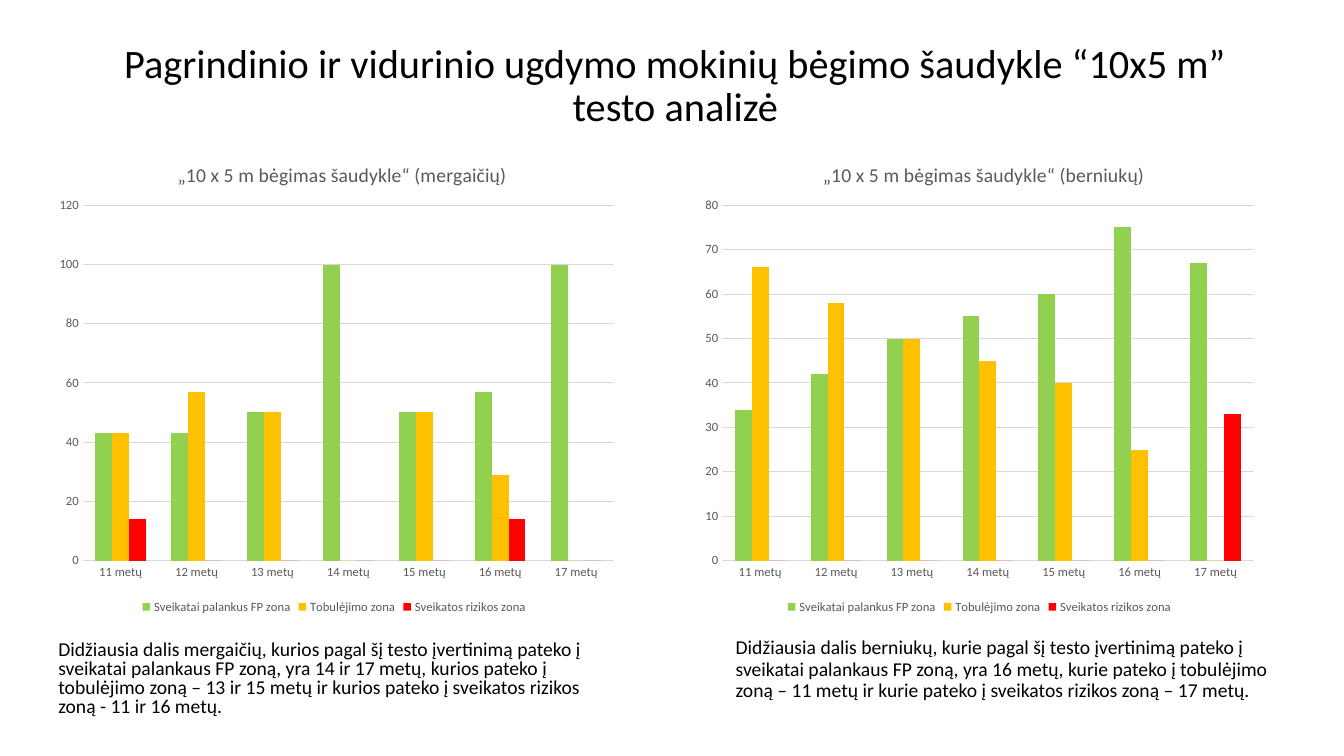
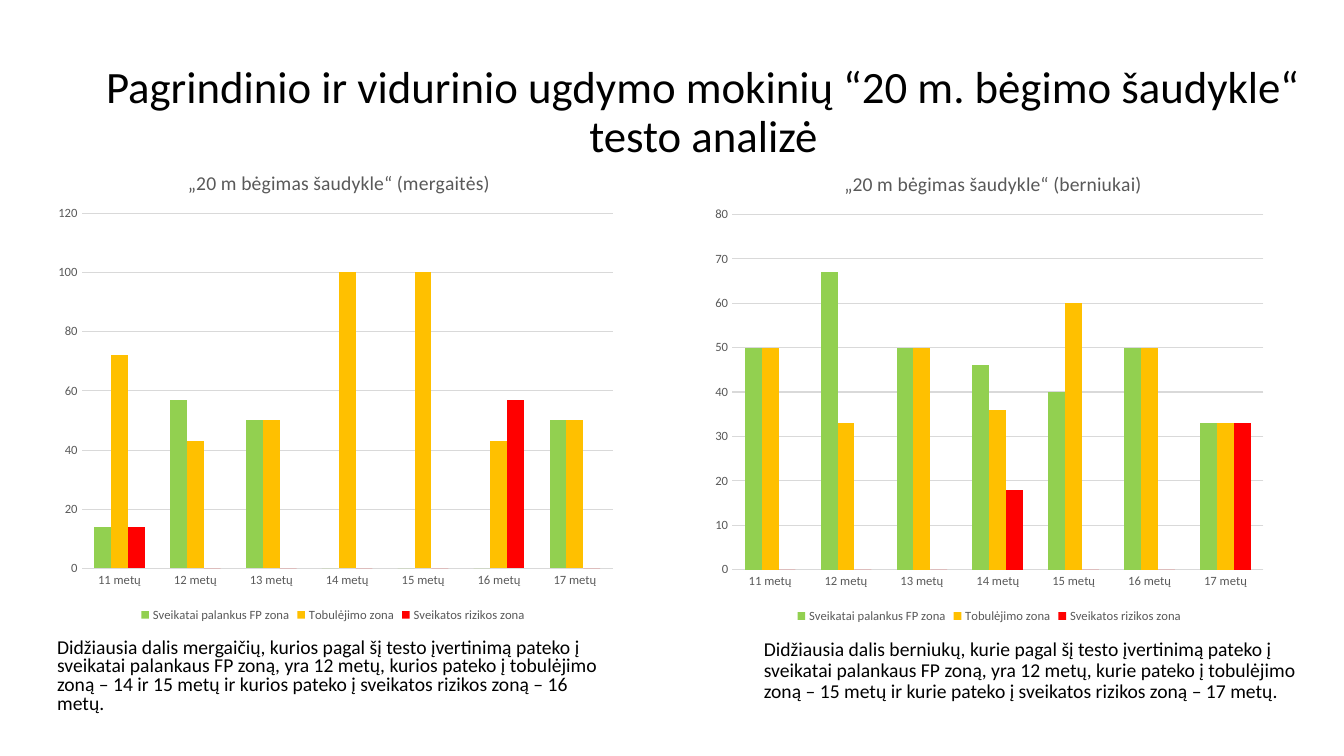
from dataclasses import dataclass

from pptx import Presentation
from pptx.chart.data import CategoryChartData
from pptx.dml.color import RGBColor
from pptx.enum.chart import XL_CHART_TYPE, XL_LEGEND_POSITION, XL_TICK_MARK
from pptx.enum.text import MSO_ANCHOR, PP_ALIGN
from pptx.oxml import parse_xml
from pptx.oxml.ns import qn
from pptx.util import Cm, Pt

COLUMNS = XL_CHART_TYPE.COLUMN_CLUSTERED
BOTTOM = XL_LEGEND_POSITION.BOTTOM
NO_TICK = XL_TICK_MARK.NONE
TOP = MSO_ANCHOR.TOP
MIDDLE = MSO_ANCHOR.MIDDLE
LEFT = PP_ALIGN.LEFT
CENTER = PP_ALIGN.CENTER

FONT = "Calibri"
COLORS = {
    "text": "000000",
    "label": "595959",
    "grid": "D9D9D9",
    "healthy": "92D050",
    "improving": "FFC000",
    "risk": "FF0000",
}
ZONES = {
    "healthy": "Sveikatai palankus FP zona",
    "improving": "Tobulėjimo zona",
    "risk": "Sveikatos rizikos zona",
}
AGES = [f"{age} metų" for age in range(11, 18)]
CHART_WIDTH, CHART_HEIGHT = 14.4, 12.1
CHART_NS = "http://schemas.openxmlformats.org/drawingml/2006/chart"


@dataclass
class TextBlock:
    text: str
    left: float
    top: float
    width: float
    height: float
    size: float = 14
    spacing: float = 0.9
    align: PP_ALIGN = LEFT
    anchor: MSO_ANCHOR = TOP


@dataclass
class ZoneChart:
    title: str
    title_x: float
    left: float
    top: float
    plot_x: float
    axis_max: int
    axis_step: int
    values: dict[str, list[int]]


@dataclass
class TestPage:
    texts: list[TextBlock]
    charts: list[ZoneChart]


PAGES = [
    TestPage(
        texts=[
            TextBlock(
                "Pagrindinio ir vidurinio ugdymo mokinių bėgimo šaudykle “10x5 m” testo analizė",
                1.73, 1.07, 30.58, 2.24, size=28.8, align=CENTER, anchor=MIDDLE,
            ),
            TextBlock(
                "Didžiausia dalis mergaičių, kurios pagal šį testo įvertinimą pateko į "
                "sveikatai palankaus FP zoną, yra 14 ir 17 metų, kurios pateko į "
                "tobulėjimo zoną – 13 ir 15 metų ir kurios pateko į sveikatos rizikos "
                "zoną - 11 ir 16 metų.",
                1.22, 16.05, CHART_WIDTH, 2.24, spacing=0.8,
            ),
            TextBlock(
                "Didžiausia dalis berniukų, kurie pagal šį testo įvertinimą pateko į "
                "sveikatai palankaus FP zoną, yra 16 metų, kurie pateko į tobulėjimo "
                "zoną – 11 metų ir kurie pateko į sveikatos rizikos zoną – 17 metų.",
                18.29, 15.95, CHART_WIDTH, 2.03,
            ),
        ],
        charts=[
            ZoneChart(
                "„10 x 5 m bėgimas šaudykle“ (mergaičių)", 0.22, 1.22, 3.48, 0.06, 120, 20,
                {
                    "healthy": [43, 43, 50, 100, 50, 57, 100],
                    "improving": [43, 57, 50, 0, 50, 29, 0],
                    "risk": [14, 0, 0, 0, 0, 14, 0],
                },
            ),
            ZoneChart(
                "„10 x 5 m bėgimas šaudykle“ (berniukų)", 0.22, 17.48, 3.48, 0.05, 80, 10,
                {
                    "healthy": [34, 42, 50, 55, 60, 75, 67],
                    "improving": [66, 58, 50, 45, 40, 25, 0],
                    "risk": [0, 0, 0, 0, 0, 0, 33],
                },
            ),
        ],
    ),
    TestPage(
        texts=[
            TextBlock(
                "Pagrindinio ir vidurinio ugdymo mokinių “20 m. bėgimo šaudykle“ testo analizė",
                2.34, 1.02, 30.78, 3.68, size=32, align=CENTER, anchor=MIDDLE,
            ),
            TextBlock(
                "Didžiausia dalis mergaičių, kurios pagal šį testo įvertinimą pateko į "
                "sveikatai palankaus FP zoną, yra 12 metų, kurios pateko į tobulėjimo "
                "zoną – 14 ir 15 metų ir kurios pateko į sveikatos rizikos zoną – 16 metų.",
                1.19, 15.98, CHART_WIDTH, 2.36, spacing=0.8,
            ),
            TextBlock(
                "Didžiausia dalis berniukų, kurie pagal šį testo įvertinimą pateko į "
                "sveikatai palankaus FP zoną, yra 12 metų, kurie pateko į tobulėjimo "
                "zoną – 15 metų ir kurie pateko į sveikatos rizikos zoną – 17 metų.",
                19, 15.98, CHART_WIDTH, 1.9,
            ),
        ],
        charts=[
            ZoneChart(
                "„20 m bėgimas šaudykle“ (mergaitės)", 0.24, 1.19, 3.68, 0.06, 120, 20,
                {
                    "healthy": [14, 57, 50, 0, 0, 0, 50],
                    "improving": [72, 43, 50, 100, 100, 43, 50],
                    "risk": [14, 0, 0, 0, 0, 57, 0],
                },
            ),
            ZoneChart(
                "„20 m bėgimas šaudykle“ (berniukai)", 0.24, 17.73, 3.71, 0.05, 80, 10,
                {
                    "healthy": [50, 67, 50, 46, 40, 50, 33],
                    "improving": [50, 33, 50, 36, 60, 50, 33],
                    "risk": [0, 0, 0, 18, 0, 0, 33],
                },
            ),
        ],
    ),
]


def color(name: str) -> RGBColor:
    return RGBColor.from_string(COLORS[name])


def set_font(font, size: float, color_name: str) -> None:
    font.name = FONT
    font.size = Pt(size)
    font.bold = False
    font.color.rgb = color(color_name)


def add_text(page, block: TextBlock) -> None:
    box = page.shapes.add_textbox(
        Cm(block.left), Cm(block.top), Cm(block.width), Cm(block.height)
    )
    frame = box.text_frame
    frame.word_wrap = True
    frame.vertical_anchor = block.anchor
    para = frame.paragraphs[0]
    para.text = block.text
    para.alignment = block.align
    para.line_spacing = block.spacing
    set_font(para.font, block.size, "text")


def set_layout(parent, index: int, settings: dict) -> None:
    for old_layout in parent.findall(qn("c:layout")):
        parent.remove(old_layout)
    items = "".join(f'<c:{tag} val="{value}"/>' for tag, value in settings.items())
    parent.insert(index, parse_xml(
        f'<c:layout xmlns:c="{CHART_NS}"><c:manualLayout>{items}</c:manualLayout></c:layout>'
    ))


def add_zone_chart(page, zone_chart: ZoneChart) -> None:
    data = CategoryChartData()
    data.categories = AGES
    for zone, values in zone_chart.values.items():
        data.add_series(ZONES[zone], values)
    chart = page.shapes.add_chart(
        COLUMNS, Cm(zone_chart.left), Cm(zone_chart.top),
        Cm(CHART_WIDTH), Cm(CHART_HEIGHT), data,
    ).chart
    set_font(chart.font, 10, "text")

    chart.has_title = True
    title = chart.chart_title.text_frame.paragraphs[0]
    title.text = zone_chart.title
    set_font(title.font, 14, "label")
    chart.chart_title.include_in_layout = False

    chart.has_legend = True
    chart.legend.position = BOTTOM
    chart.legend.include_in_layout = False
    set_font(chart.legend.font, 9, "label")

    plot = chart.plots[0]
    plot.gap_width = 150
    plot.overlap = 0
    plot.vary_by_categories = False
    for zone, series in zip(zone_chart.values, plot.series):
        series.format.fill.solid()
        series.format.fill.fore_color.rgb = color(zone)

    for axis in (chart.category_axis, chart.value_axis):
        axis.major_tick_mark = NO_TICK
        axis.minor_tick_mark = NO_TICK
        axis.format.line.fill.background()
        set_font(axis.tick_labels.font, 9, "label")
    value_axis = chart.value_axis
    value_axis.minimum_scale = 0
    value_axis.maximum_scale = zone_chart.axis_max
    value_axis.major_unit = zone_chart.axis_step
    grid = value_axis.major_gridlines.format.line
    grid.color.rgb = color("grid")
    grid.width = Pt(0.75)

    edges = {"xMode": "edge", "yMode": "edge"}
    root = chart._chartSpace
    set_layout(
        root.xpath("c:chart/c:title")[0], 1,
        {**edges, "x": zone_chart.title_x, "y": 0.04},
    )
    set_layout(
        root.xpath("c:chart/c:plotArea")[0], 0,
        {"layoutTarget": "inner", **edges,
         "x": zone_chart.plot_x, "y": 0.14, "w": 0.93, "h": 0.74},
    )


def main() -> None:
    deck = Presentation()
    deck.slide_width = Cm(33.87)
    deck.slide_height = Cm(19.05)
    for test_page in PAGES:
        page = deck.slides.add_slide(deck.slide_layouts[6])
        for block in test_page.texts:
            add_text(page, block)
        for zone_chart in test_page.charts:
            add_zone_chart(page, zone_chart)
    deck.save("out.pptx")


if __name__ == "__main__":
    main()
